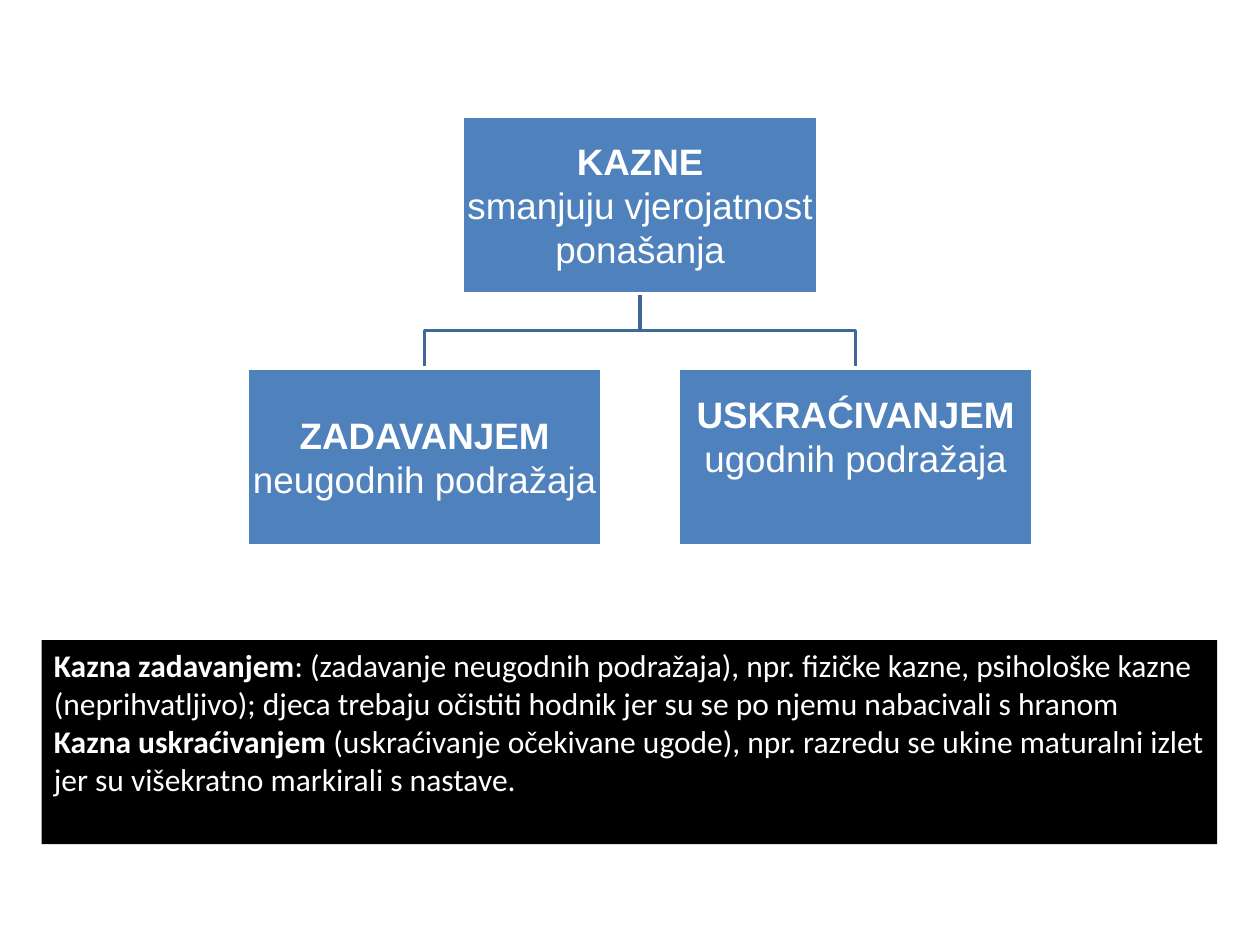
from pptx import Presentation
from pptx.dml.color import RGBColor
from pptx.enum.shapes import MSO_SHAPE
from pptx.enum.text import MSO_ANCHOR, PP_ALIGN
from pptx.util import Inches, Pt

WHITE = RGBColor(0xFF, 0xFF, 0xFF)
BLACK = RGBColor(0x00, 0x00, 0x00)
BLUE = RGBColor(0x4F, 0x81, 0xBD)
NAVY = RGBColor(0x3F, 0x67, 0x97)
WIDE, HIGH = 2.82, 1.41
ROOT = (3.67, 0.92)
LEFT = (1.96, 2.92)
RIGHT = (5.38, 2.92)


class Page:
    """Draws the styled parts of one slide."""

    def __init__(self, slide):
        self.slide = slide

    def panel(self, x, y, wide, high, fill):
        box = self.slide.shapes.add_shape(
            MSO_SHAPE.RECTANGLE, Inches(x), Inches(y), Inches(wide), Inches(high))
        box.shadow.inherit = False
        box.fill.solid()
        box.fill.fore_color.rgb = fill
        box.line.fill.background()
        box.text_frame.word_wrap = True
        return box

    def label(self, frame, lines, font, size, align):
        for i, line in enumerate(lines):
            para = frame.paragraphs[0] if i == 0 else frame.add_paragraph()
            para.alignment = align
            for text, bold in line:
                run = para.add_run()
                run.text = text
                run.font.name = font
                run.font.size = Pt(size)
                run.font.bold = bold
                run.font.color.rgb = WHITE

    def node(self, spot, title, body, base=0.01):
        box = self.panel(*spot, WIDE, HIGH, BLUE)
        box.line.color.rgb = WHITE
        box.line.width = Pt(2)
        frame = box.text_frame
        frame.margin_left = frame.margin_right = frame.margin_top = Inches(0.01)
        frame.margin_bottom = Inches(base)
        frame.vertical_anchor = MSO_ANCHOR.MIDDLE
        lines = [[(title, True)], [(body, False)]]
        self.label(frame, lines, "Arial", 21, PP_ALIGN.CENTER)

    def link(self, start, end):
        x, top = start[0] + WIDE / 2, start[1] + HIGH
        to, low = end[0] + WIDE / 2, end[1]
        mid = (top + low) / 2
        points = [(Inches(a), Inches(b)) for a, b in
                  ((x, top), (x, mid), (to, mid), (to, low))]
        form = self.slide.shapes.build_freeform(*points[0])
        form.add_line_segments(points[1:], close=False)
        elbow = form.convert_to_shape()
        elbow.shadow.inherit = False
        elbow.fill.background()
        elbow.line.color.rgb = NAVY
        elbow.line.width = Pt(2)

    def note(self, lines):
        box = self.panel(0.33, 5.08, 9.33, 1.62, BLACK)
        box.text_frame.vertical_anchor = MSO_ANCHOR.TOP
        self.label(box.text_frame, lines, "Calibri", 18, PP_ALIGN.LEFT)


def main():
    deck = Presentation()
    deck.slide_width, deck.slide_height = Inches(10), Inches(7.5)
    page = Page(deck.slides.add_slide(deck.slide_layouts[6]))
    for end in (RIGHT, LEFT):
        page.link(ROOT, end)
    page.node(ROOT, "KAZNE", "smanjuju vjerojatnost ponašanja")
    page.node(LEFT, "ZADAVANJEM", "neugodnih podražaja")
    page.node(RIGHT, "USKRAĆIVANJEM", "ugodnih podražaja", base=0.35)
    page.note([
        [("Kazna zadavanjem", True),
         (": (zadavanje neugodnih podražaja), npr. fizičke kazne, psihološke kazne "
          "(neprihvatljivo); djeca trebaju očistiti hodnik jer su se po njemu "
          "nabacivali s hranom", False)],
        [("Kazna uskraćivanjem", True),
         (" (uskraćivanje očekivane ugode), npr. razredu se ukine maturalni izlet "
          "jer su višekratno markirali s nastave.", False)],
    ])
    deck.save("out.pptx")


if __name__ == "__main__":
    main()
